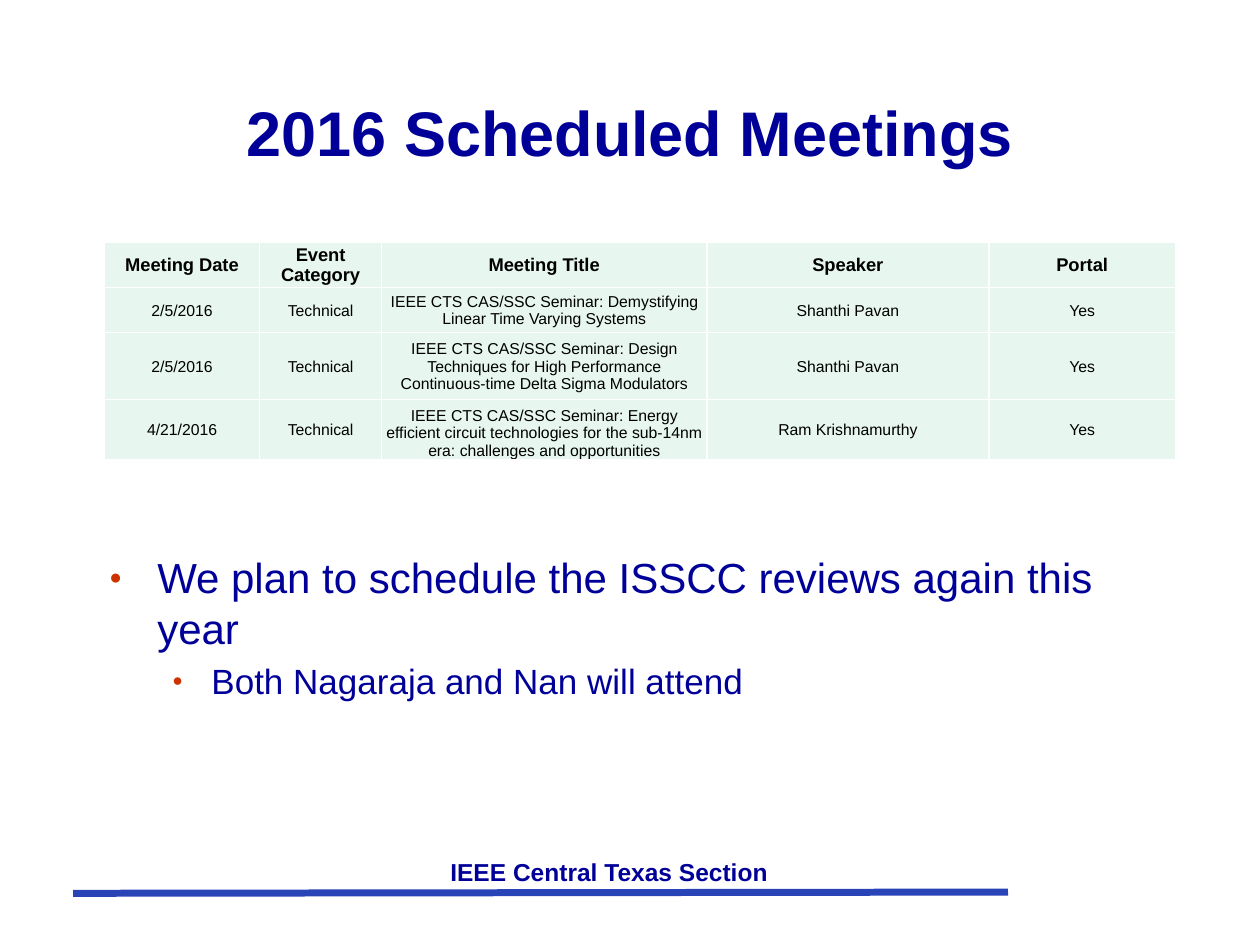
from typing import NamedTuple

from lxml.etree import SubElement
from pptx import Presentation
from pptx.dml.color import RGBColor
from pptx.enum.shapes import MSO_CONNECTOR as Link
from pptx.enum.text import MSO_ANCHOR as Anchor, PP_ALIGN as Align
from pptx.oxml.ns import qn
from pptx.util import Inches, Pt

NAVY = RGBColor(0x00, 0x00, 0x99)
BLUE = RGBColor(0x29, 0x44, 0xB7)
MINT = RGBColor(0xE7, 0xF6, 0xEF)
BLACK = RGBColor(0x00, 0x00, 0x00)
WHITE = RGBColor(0xFF, 0xFF, 0xFF)
RUST = RGBColor(0xCC, 0x33, 0x00)


class Box(NamedTuple):
    left: float
    top: float
    width: float
    height: float


class Style(NamedTuple):
    size: float
    color: RGBColor
    bold: bool = False


class Point(NamedTuple):
    text: str
    size: float
    level: int
    left: float
    hang: float
    gap: float


class Event(NamedTuple):
    date: str
    kind: str
    title: str
    speaker: str
    portal: str


HEAD = Event("Meeting Date", "Event Category", "Meeting Title", "Speaker", "Portal")
EVENTS = [
    Event("2/5/2016", "Technical",
          "IEEE CTS CAS/SSC Seminar: Demystifying Linear Time Varying Systems",
          "Shanthi Pavan", "Yes"),
    Event("2/5/2016", "Technical",
          "IEEE CTS CAS/SSC Seminar: Design Techniques for High Performance "
          "Continuous-time Delta Sigma Modulators",
          "Shanthi Pavan", "Yes"),
    Event("4/21/2016", "Technical",
          "IEEE CTS CAS/SSC Seminar: Energy efficient circuit technologies "
          "for the sub-14nm era: challenges and opportunities",
          "Ram Krishnamurthy", "Yes"),
]
COLS = [1.23, 0.97, 2.58, 2.24, 1.48]
ROWS = [0.33, 0.36, 0.53, 0.48]
POINTS = [
    Point("We plan to schedule the ISSCC reviews again this year", 24, 0, 0.38, 0.38, 0),
    Point("Both Nagaraja and Nan will attend", 20, 1, 0.81, 0.31, 4),
]


def add_run(para, text: str, style: Style) -> None:
    run = para.add_run()
    run.text = text
    font = run.font
    font.name = "Arial"
    font.size = Pt(style.size)
    font.bold = style.bold
    font.color.rgb = style.color


def add_frame(slide, box: Box, anchor=Anchor.TOP):
    frame = slide.shapes.add_textbox(*map(Inches, box)).text_frame
    frame.word_wrap = True
    frame.vertical_anchor = anchor
    return frame


def add_label(slide, box: Box, text: str, style: Style, anchor=Anchor.TOP) -> None:
    para = add_frame(slide, box, anchor).paragraphs[0]
    para.alignment = Align.CENTER
    add_run(para, text, style)


def set_edges(cell) -> None:
    props = cell._tc.get_or_add_tcPr()
    for spot, side in enumerate(("lnL", "lnR", "lnT", "lnB")):
        edge = props.makeelement(qn(f"a:{side}"), {"w": str(Pt(1))})
        fill = SubElement(edge, qn("a:solidFill"))
        SubElement(fill, qn("a:srgbClr"), val=str(WHITE))
        props.insert(spot, edge)


def fill_cell(cell, text: str, style: Style, anchor) -> None:
    cell.margin_left = cell.margin_right = cell.margin_top = Inches(0.01)
    cell.margin_bottom = 0
    cell.vertical_anchor = anchor
    cell.fill.solid()
    cell.fill.fore_color.rgb = MINT
    set_edges(cell)
    para = cell.text_frame.paragraphs[0]
    para.alignment = Align.CENTER
    add_run(para, text, style)


def add_events(slide, box: Box) -> None:
    table = slide.shapes.add_table(len(ROWS), len(COLS), *map(Inches, box)).table
    table.first_row = table.horz_banding = False
    for col, width in zip(table.columns, COLS):
        col.width = Inches(width)
    for row, height in zip(table.rows, ROWS):
        row.height = Inches(height)
    for r, event in enumerate([HEAD, *EVENTS]):
        style = Style(9, BLACK) if r else Style(10.5, BLACK, True)
        for c, text in enumerate(event):
            low = (r, c) == (3, 2)
            fill_cell(table.cell(r, c), text, style,
                      Anchor.BOTTOM if low else Anchor.MIDDLE)


def add_point(para, point: Point) -> None:
    para.level = point.level
    props = para._p.get_or_add_pPr()
    props.set("marL", str(Inches(point.left)))
    props.set("indent", str(-Inches(point.hang)))
    para.space_before = Pt(point.gap)
    color = SubElement(props, qn("a:buClr"))
    SubElement(color, qn("a:srgbClr"), val=str(RUST))
    SubElement(props, qn("a:buSzPct"), val="50000")
    SubElement(props, qn("a:buFont"), typeface="Arial")
    SubElement(props, qn("a:buChar"), char="●")
    add_run(para, point.text, Style(point.size, NAVY))


def add_rule(slide) -> None:
    ends = map(Inches, (0.58, 7.09, 8, 7.08))
    rule = slide.shapes.add_connector(Link.STRAIGHT, *ends)
    rule.line.color.rgb = BLUE
    rule.line.width = Pt(4)
    SubElement(rule._element.spPr, qn("a:effectLst"))


def main() -> None:
    deck = Presentation()
    deck.slide_width, deck.slide_height = Inches(10), Inches(7.5)
    slide = deck.slides.add_slide(deck.slide_layouts[6])

    # Footer
    add_rule(slide)
    add_label(slide, Box(1.75, 6.75, 6.17, 0.33), "IEEE Central Texas Section",
              Style(14, NAVY, True))

    # Title
    add_label(slide, Box(0.75, 0.42, 8.5, 1.25), "2016 Scheduled Meetings",
              Style(36, NAVY, True), Anchor.MIDDLE)

    # Meetings
    add_events(slide, Box(0.83, 1.92, sum(COLS), sum(ROWS)))

    # Plans
    frame = add_frame(slide, Box(0.77, 4.33, 8.5, 1.17))
    for i, point in enumerate(POINTS):
        add_point(frame.add_paragraph() if i else frame.paragraphs[0], point)

    deck.save("out.pptx")


if __name__ == "__main__":
    main()
